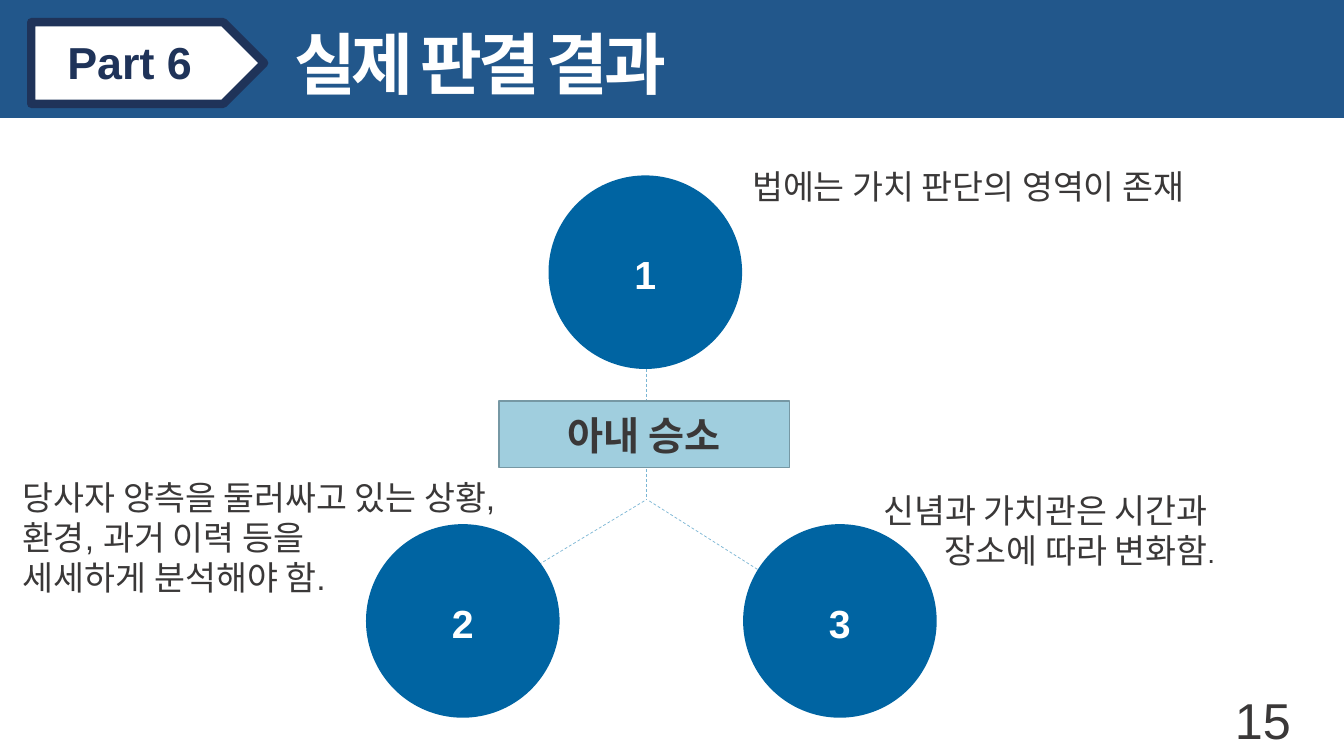
from pptx import Presentation
from pptx import util as u
from pptx.dml.color import RGBColor
from pptx.enum import dml, shapes, text
from pptx.oxml.ns import qn
from lxml import etree

BANNER = RGBColor(0x22, 0x57, 0x8B)
NAVY = RGBColor(0x1F, 0x33, 0x59)
WHITE = RGBColor(0xFF, 0xFF, 0xFF)
CIRCLE = RGBColor(0x00, 0x64, 0xA2)
DASH = RGBColor(0x7B, 0xB6, 0xD4)
VERDICT = RGBColor(0xA0, 0xCE, 0xDE)
VERDICT_EDGE = RGBColor(0x76, 0x98, 0xA4)
INK = RGBColor(0x3A, 0x38, 0x38)

LEFT, CENTER, RIGHT = text.PP_ALIGN.LEFT, text.PP_ALIGN.CENTER, text.PP_ALIGN.RIGHT
DIAMETER = 1.92


def write(tf, lines, size, color, bold=False, align=LEFT, spacing=None):
    """Fill a text frame; each line is a list of (text, size or None) runs."""
    for i, runs in enumerate(lines):
        p = tf.paragraphs[0] if i == 0 else tf.add_paragraph()
        p.alignment = align
        for words, own_size in runs:
            r = p.add_run()
            r.text = words
            r.font.name = "Arial"
            r.font.size = u.Pt(own_size or size)
            r.font.bold = bold
            r.font.color.rgb = color
            if spacing is not None:
                r._r.get_or_add_rPr().set("spc", str(spacing * 100))


def add_text(parent, box, lines, size, color, wrap=True, **style):
    """Add a text box that grows with its text."""
    tf = parent.add_textbox(*map(u.Inches, box)).text_frame
    tf.word_wrap = wrap
    tf.auto_size = text.MSO_AUTO_SIZE.SHAPE_TO_FIT_TEXT
    write(tf, lines, size, color, **style)


def add_solid(parent, kind, box, fill, edge=None, width=1):
    """Add a flat preset shape with an optional outline."""
    sp = parent.add_shape(kind, *map(u.Inches, box))
    sp.shadow.inherit = False
    sp.fill.solid()
    sp.fill.fore_color.rgb = fill
    if edge is None:
        sp.line.fill.background()
    else:
        sp.line.color.rgb = edge
        sp.line.width = u.Pt(width)
    return sp


def add_dash(parent, x1, y1, x2, y2):
    """Add a thin dashed connector."""
    line = parent.add_connector(shapes.MSO_CONNECTOR.STRAIGHT,
                                *map(u.Inches, (x1, y1, x2, y2)))
    line.line.color.rgb = DASH
    line.line.width = u.Pt(0.5)
    line.line.dash_style = dml.MSO_LINE.DASH
    etree.SubElement(line._element.spPr, qn("a:effectLst"))


def add_header(s, x, y, w, h):
    """Draw the banner with its part tag and title."""
    add_solid(s.shapes, shapes.MSO_SHAPE.RECTANGLE, (x, y, w, h), BANNER)
    tag = s.shapes.add_group_shape().shapes
    add_solid(tag, shapes.MSO_SHAPE.PENTAGON, (x + 0.31, y + 0.3, 2.31, 0.81),
              WHITE, NAVY, 6)
    add_text(tag, (x + 0.57, y + 0.38, 1.45, 0.64), [[("Part 6", None)]],
             32, NAVY, wrap=False, bold=True)
    add_text(s.shapes, (x + 2.82, y + 0.25, 4.28, 0.91), [[("실제 판결 결과", None)]],
             48, WHITE, wrap=False, bold=True, spacing=-3)


def add_diagram(s, x, y):
    """Draw the three numbered circles around the verdict."""
    hub = x + 2.78
    add_dash(s.shapes, hub, y + 1.92, hub, y + 3.22)
    add_dash(s.shapes, hub - 0.02, y + 3.23, x + 1.35, y + 4.08)
    add_dash(s.shapes, hub + 0.03, y + 3.23, x + 3.98, y + 3.97)
    for number, dx, dy in (("1", 1.81, 0), ("2", 0, 3.46), ("3", 3.74, 3.46)):
        sp = add_solid(s.shapes, shapes.MSO_SHAPE.OVAL,
                       (x + dx, y + dy, DIAMETER, DIAMETER), CIRCLE)
        tf = sp.text_frame
        tf.vertical_anchor = text.MSO_ANCHOR.MIDDLE
        tf.margin_top = u.Inches(0.09)
        write(tf, [[(number, None)]], 28, WHITE, bold=True, align=CENTER)
    sp = add_solid(s.shapes, shapes.MSO_SHAPE.RECTANGLE,
                   (x + 1.32, y + 2.24, 2.88, 0.66), VERDICT, VERDICT_EDGE)
    sp.text_frame.vertical_anchor = text.MSO_ANCHOR.MIDDLE
    write(sp.text_frame, [[("아내 승소", None)]], 28, INK, bold=True, align=CENTER)


def add_reasons(s, x, y):
    """Place the explanation beside each circle."""
    add_text(s.shapes, (x + 6.99, y, 5.04, 0.5),
             [[("법에는 가치 판단의 영역이 존재 ", None)]],
             24, INK, wrap=False, align=CENTER)
    add_text(s.shapes, (x, y + 3.08, 6.06, 1.31),
             [[("당사자 양측을 둘러싸고 있는 상황,", None)],
              [("환경, 과거 이력 등을", None)],
              [("세세하게 분석해야 함.", None)]], 24, INK)
    add_text(s.shapes, (x + 8.02, y + 3.21, 4, 0.91),
             [[("신념과 가치관은 시간과 ", None)],
              [("장소에 따라 변화함", None), (".", 20)]], 24, INK, align=RIGHT)


def main():
    """Build and save the slide."""
    prs = Presentation()
    prs.slide_width, prs.slide_height = u.Inches(13.33), u.Inches(7.5)
    s = prs.slides.add_slide(prs.slide_layouts[6])
    add_header(s, 0, -0.08, 13.33, 1.25)
    add_diagram(s, 3.63, 1.74)
    add_reasons(s, 0.13, 1.6)
    add_text(s.shapes, (12.15, 6.79, 1.08, 0.71), [[("15", None)]], 36, INK)
    prs.save("out.pptx")


if __name__ == "__main__":
    main()
